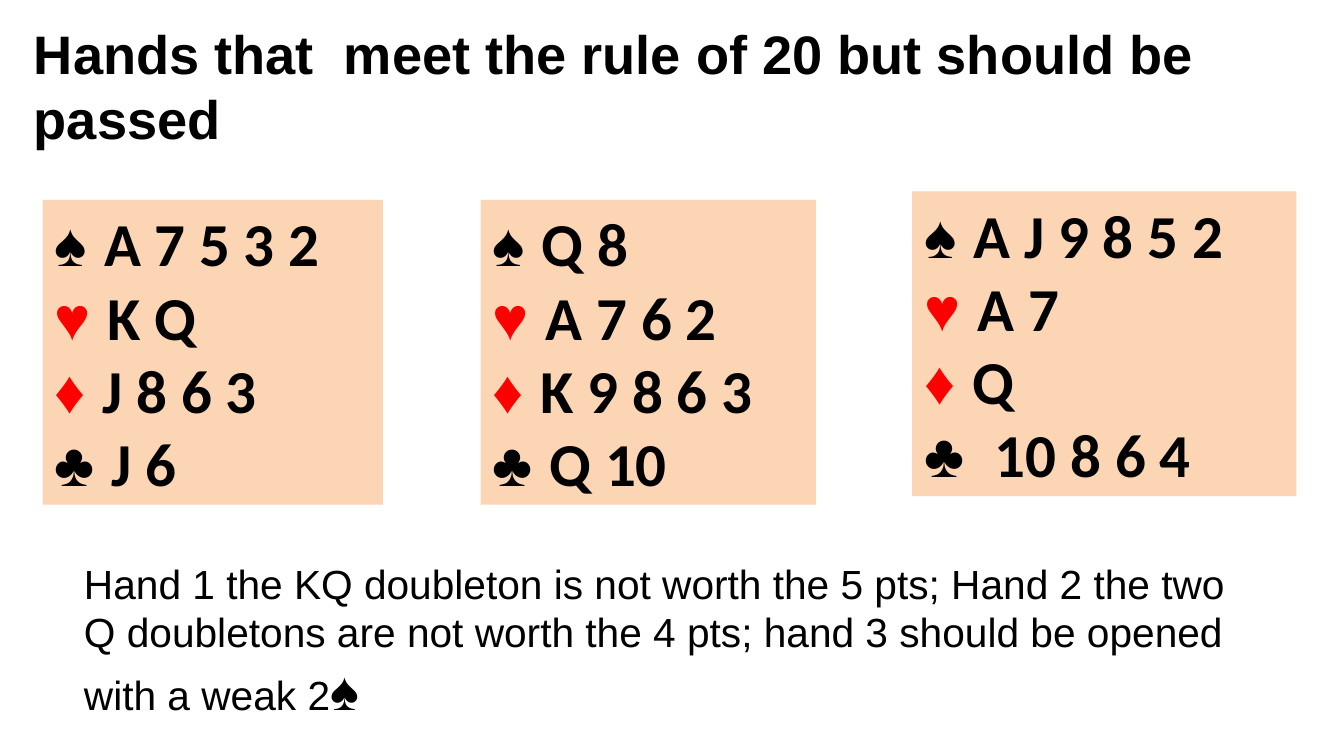
from dataclasses import dataclass

from pptx import Presentation
from pptx import util as u
from pptx.dml.color import RGBColor
from pptx.enum import shapes, text


@dataclass(frozen=True)
class Theme:
    ink: RGBColor = RGBColor(0, 0, 0)
    red: RGBColor = RGBColor(255, 0, 0)
    card: RGBColor = RGBColor(0xFC, 0xD5, 0xB5)
    sans: str = "Arial"
    ranks: str = "Calibri"
    title_size: int = 32
    hand_size: int = 36
    note_size: int = 24
    symbol_size: int = 32


THEME = Theme()
SUITS = (("♠ ", THEME.ink), ("♥ ", THEME.red), ("♦ ", THEME.red), ("♣ ", THEME.ink))
HANDS = (
    ((0.35, 1.64, 2.79, 2.5), ("A 7 5 3 2", "K Q", "J 8 6 3", "J 6")),
    ((3.94, 1.64, 2.75, 2.5), ("Q 8", "A 7 6 2", "K 9 8 6 3", "Q 10")),
    ((7.48, 1.57, 3.15, 2.5), ("A J 9 8 5 2", "A 7", "Q", " 10 8 6 4")),
)


def add_span(para, words, font=None, color=None, size=None):
    span = para.add_run()
    span.text = words
    if font:
        span.font.name = font
    if color is not None:
        span.font.color.rgb = color
    if size:
        span.font.size = u.Pt(size)


def style_para(para, size, bold=False):
    para.alignment = text.PP_ALIGN.LEFT
    para.font.size = u.Pt(size)
    para.font.bold = bold


def add_text(page, box, size, bold=False):
    frame = page.shapes.add_textbox(*map(u.Inches, box)).text_frame
    frame.word_wrap = True
    para = frame.paragraphs[0]
    style_para(para, size, bold)
    para.font.name = THEME.sans
    para.font.color.rgb = THEME.ink
    return para


def add_title(page, box):
    para = add_text(page, box, THEME.title_size, True)
    add_span(para, "Hands that  meet the rule of 20 but should be passed")


def add_hand(page, box, holdings):
    card = page.shapes.add_shape(shapes.MSO_SHAPE.RECTANGLE, *map(u.Inches, box))
    card.shadow.inherit = False
    card.fill.solid()
    card.fill.fore_color.rgb = THEME.card
    card.line.fill.background()
    frame = card.text_frame
    frame.word_wrap = True
    frame.vertical_anchor = text.MSO_ANCHOR.TOP
    for row, ((suit, color), ranks) in enumerate(zip(SUITS, holdings)):
        para = frame.add_paragraph() if row else frame.paragraphs[0]
        style_para(para, THEME.hand_size, True)
        add_span(para, suit, THEME.sans, color)
        add_span(para, ranks, THEME.ranks, THEME.ink)


def add_note(page, box):
    para = add_text(page, box, THEME.note_size)
    add_span(
        para,
        "Hand 1 the KQ doubleton is not worth the 5 pts; "
        "Hand 2 the two Q doubletons are not worth the 4 pts; "
        "hand 3 should be opened with a weak 2",
    )
    add_span(para, "♠", size=THEME.symbol_size)


def main():
    deck = Presentation()
    deck.slide_width = u.Inches(11.02)
    deck.slide_height = u.Inches(6.2)
    page = deck.slides.add_slide(deck.slide_layouts[6])
    add_title(page, (0.18, 0.12, 10.64, 1.16))
    for box, holdings in HANDS:
        add_hand(page, box, holdings)
    add_note(page, (0.59, 4.53, 9.64, 1.38))
    deck.save("out.pptx")


if __name__ == "__main__":
    main()
